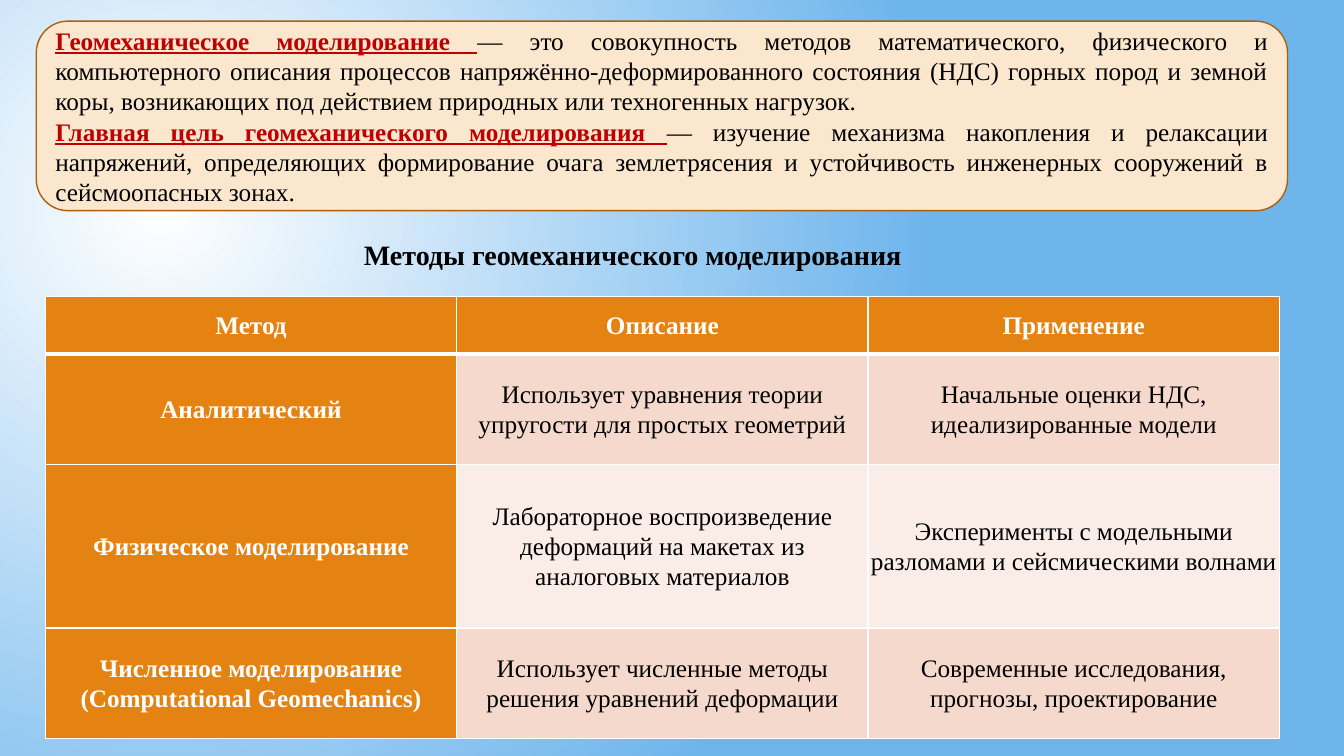
"""Build a slide on geomechanical modelling: definitions and a table of methods."""
from lxml import etree
from pptx import Presentation
from pptx import util as u
from pptx.dml.color import RGBColor
from pptx.enum import shapes, text
from pptx.oxml.ns import qn


def paint(color_format, color):
    color_format.rgb = RGBColor.from_string(color)


def add_run(paragraph, words, color, size=18, bold=False, underline=False):
    run = paragraph.add_run()
    run.text = words
    run.font.name = "Times New Roman"
    run.font.size = u.Pt(size)
    run.font.bold = bold
    run.font.underline = underline
    paint(run.font.color, color)


presentation = Presentation()
presentation.slide_width = u.Inches(13.33)
presentation.slide_height = u.Inches(7.5)
slide = presentation.slides.add_slide(presentation.slide_layouts[6])

background = slide.background.fill
background.gradient()
for stop, position, color in zip(background.gradient_stops, (0, 1), ("FFFFFF", "6EB5EC")):
    stop.position = position
    paint(stop.color, color)
linear = slide.element.find(".//" + qn("a:lin"))
gradient = linear.getparent()
gradient.remove(linear)
circle = etree.SubElement(gradient, qn("a:path"), {"path": "circle"})
etree.SubElement(circle, qn("a:fillToRect"), l="50000", t="55000", r="125000", b="100000")

definitions = [
    ("Геомеханическое моделирование ",
     "— это совокупность методов математического, физического и компьютерного описания "
     "процессов напряжённо-деформированного состояния (НДС) горных пород и земной коры, "
     "возникающих под действием природных или техногенных нагрузок."),
    ("Главная цель геомеханического моделирования ",
     "— изучение механизма накопления и релаксации напряжений, определяющих формирование "
     "очага землетрясения и устойчивость инженерных сооружений в сейсмоопасных зонах."),
]
panel = slide.shapes.add_shape(
    shapes.MSO_SHAPE.ROUNDED_RECTANGLE,
    u.Inches(0.36), u.Inches(0.21), u.Inches(12.41), u.Inches(1.88))
panel.shadow.inherit = False
panel.fill.solid()
paint(panel.fill.fore_color, "FBE6CE")
paint(panel.line.color, "A9610D")
panel.line.width = u.Pt(1)
frame = panel.text_frame
frame.word_wrap = True
frame.vertical_anchor = text.MSO_ANCHOR.MIDDLE
for index, (term, meaning) in enumerate(definitions):
    paragraph = frame.add_paragraph() if index else frame.paragraphs[0]
    paragraph.alignment = text.PP_ALIGN.JUSTIFY
    add_run(paragraph, term, "C00000", bold=True, underline=True)
    add_run(paragraph, meaning, "000000")

methods = [
    ("Метод", "Описание", "Применение"),
    ("Аналитический",
     "Использует уравнения теории упругости для простых геометрий",
     "Начальные оценки НДС, идеализированные модели"),
    ("Физическое моделирование",
     "Лабораторное воспроизведение деформаций на макетах из аналоговых материалов",
     "Эксперименты с модельными разломами и сейсмическими волнами"),
    ("Численное моделирование (Computational Geomechanics)",
     "Использует численные методы решения уравнений деформации",
     "Современные исследования, прогнозы, проектирование"),
]
row_heights = [0.57, 1.1, 1.62, 1.1]
table = slide.shapes.add_table(
    len(methods), 3, u.Inches(0.45), u.Inches(2.94),
    u.Inches(12.24), u.Inches(sum(row_heights))).table
for column in table.columns:
    column.width = u.Inches(4.08)
for row_index, (words_in_row, height) in enumerate(zip(methods, row_heights)):
    table.rows[row_index].height = u.Inches(height)
    for column_index, words in enumerate(words_in_row):
        cell = table.cell(row_index, column_index)
        heading = row_index == 0 or column_index == 0
        cell.vertical_anchor = text.MSO_ANCHOR.MIDDLE
        cell.margin_left = cell.margin_right = u.Inches(0.01)
        cell.margin_top = cell.margin_bottom = u.Inches(0.01)
        properties = cell._tc.get_or_add_tcPr()
        for side in ("L", "R", "T", "B"):
            thick = (row_index, side) in ((0, "B"), (1, "T"))
            border = etree.SubElement(
                properties, qn("a:ln" + side), w=str(u.Pt(3 if thick else 1)))
            solid = etree.SubElement(border, qn("a:solidFill"))
            etree.SubElement(solid, qn("a:srgbClr"), val="FFFFFF")
        cell.fill.solid()
        band = "F5D9CC" if row_index % 2 else "FAEDE7"
        paint(cell.fill.fore_color, "E48312" if heading else band)
        paragraph = cell.text_frame.paragraphs[0]
        paragraph.alignment = text.PP_ALIGN.CENTER
        paragraph.line_spacing = 1.07
        add_run(paragraph, words, "FFFFFF" if heading else "000000", bold=heading)

title = slide.shapes.add_textbox(
    u.Inches(3.51), u.Inches(2.31), u.Inches(5.58), u.Inches(0.44))
title.text_frame.word_wrap = False
title.text_frame.auto_size = text.MSO_AUTO_SIZE.SHAPE_TO_FIT_TEXT
add_run(title.text_frame.paragraphs[0], "Методы геомеханического моделирования",
        "000000", size=20, bold=True)

presentation.save("out.pptx")
